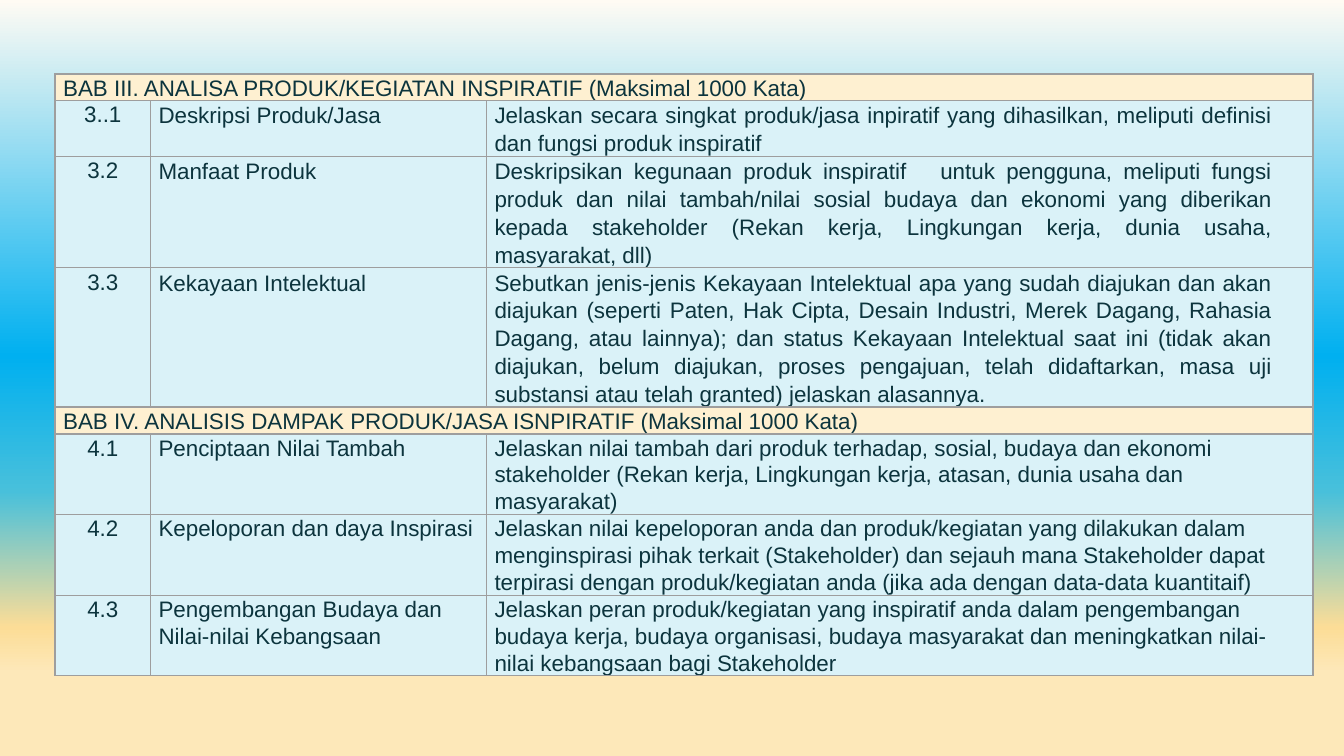
"""Build a slide with a table that outlines chapters III and IV of a report."""
import pptx
import pptx.util
import pptx.dml.color
import pptx.enum.text
import pptx.oxml
import pptx.oxml.ns
import lxml.etree

inch = pptx.util.Inches
align = pptx.enum.text.PP_ALIGN
qn = pptx.oxml.ns.qn


def tint(color):
    return pptx.dml.color.RGBColor.from_string(color)


def paint(parent, color):
    fill = lxml.etree.SubElement(parent, qn("a:solidFill"))
    lxml.etree.SubElement(fill, qn("a:srgbClr"), val=color)


stops = [(0, "FFFBF3"), (47, "00B0F0"), (65, "48C0DB"), (83, "FCDD97"), (89, "FDE8B9")]
heads = {
    "3": "BAB III. ANALISA PRODUK/KEGIATAN INSPIRATIF (Maksimal 1000 Kata)",
    "4": "BAB IV. ANALISIS DAMPAK PRODUK/JASA ISNPIRATIF (Maksimal 1000 Kata)",
}
items = [
    ("3..1", "Deskripsi Produk/Jasa",
     "Jelaskan secara singkat produk/jasa inpiratif yang dihasilkan, meliputi definisi "
     "dan fungsi produk inspiratif", 2),
    ("3.2", "Manfaat Produk ",
     "Deskripsikan kegunaan produk inspiratif   untuk pengguna, meliputi fungsi produk "
     "dan nilai tambah/nilai sosial budaya dan ekonomi yang diberikan kepada stakeholder "
     "(Rekan kerja, Lingkungan kerja, dunia usaha, masyarakat, dll)", 4),
    ("3.3", "Kekayaan Intelektual ",
     "Sebutkan jenis-jenis Kekayaan Intelektual apa yang sudah diajukan dan akan diajukan "
     "(seperti Paten, Hak Cipta, Desain Industri, Merek Dagang, Rahasia Dagang, atau "
     "lainnya); dan status Kekayaan Intelektual saat ini (tidak akan diajukan, belum "
     "diajukan, proses pengajuan, telah didaftarkan, masa uji substansi atau telah "
     "granted) jelaskan alasannya.", 5),
    ("4.1", "Penciptaan Nilai Tambah",
     "Jelaskan nilai tambah dari produk terhadap, sosial, budaya dan ekonomi stakeholder "
     "(Rekan kerja, Lingkungan kerja, atasan, dunia usaha dan masyarakat)", 3),
    ("4.2", "Kepeloporan dan daya Inspirasi",
     "Jelaskan nilai kepeloporan anda dan produk/kegiatan yang dilakukan dalam "
     "menginspirasi pihak terkait (Stakeholder) dan sejauh mana Stakeholder dapat "
     "terpirasi dengan produk/kegiatan anda (jika ada dengan data-data kuantitaif)", 3),
    ("4.3", "Pengembangan Budaya dan Nilai-nilai Kebangsaan",
     "Jelaskan peran produk/kegiatan yang inspiratif anda dalam pengembangan budaya kerja, "
     "budaya organisasi, budaya masyarakat dan meningkatkan nilai-nilai kebangsaan bagi "
     "Stakeholder", 3),
]

rows = []
for item in items:
    part = item[0][0]
    if part in heads:
        rows.append((heads.pop(part), "", "", 1))
    rows.append(item)

deck = pptx.Presentation()
deck.slide_width, deck.slide_height = inch(10), inch(10 * 9 / 16)
slide = deck.slides.add_slide(deck.slide_layouts[6])

slide.background.fill.gradient()
grad = next(slide.element.iter(qn("a:gradFill")))
ramp = grad.find(qn("a:gsLst"))
for old in list(ramp):
    ramp.remove(old)
for share, color in stops:
    stop = lxml.etree.SubElement(ramp, qn("a:gs"), pos=str(share * 1000))
    lxml.etree.SubElement(stop, qn("a:srgbClr"), val=color)
grad.find(qn("a:lin")).set("ang", "5400000")

line = 0.2
widths = [0.71, 2.5, 6.15]
high = line * sum(row[3] for row in rows)
frame = slide.shapes.add_table(
    len(rows), len(widths), inch(0.41), inch(0.55), inch(sum(widths)), inch(high))
table = frame.table
table.first_row = table.horz_banding = False
for column, width in zip(table.columns, widths):
    column.width = inch(width)

for i, (code, name, text, lines) in enumerate(rows):
    table.rows[i].height = inch(line * lines)
    head = not name
    if head:
        table.cell(i, 0).merge(table.cell(i, 2))
    for j, words in enumerate((code, name, text)):
        cell = table.cell(i, j)
        cell.fill.solid()
        cell.fill.fore_color.rgb = tint("FEF0D1" if head else "DAF2F8")
        cell.margin_left = inch(0.06)
        cell.margin_right = inch(0.3 if j == 2 else 0.06)
        cell.margin_top = cell.margin_bottom = 0
        props = cell._tc.get_or_add_tcPr()
        for k, side in enumerate(("lnL", "lnR", "lnT", "lnB")):
            edge = lxml.etree.Element(qn("a:" + side), w=str(pptx.util.Pt(0.75)))
            paint(edge, "9E9E9E")
            props.insert(k, edge)
        if not words:
            continue
        cell.text_frame.text = words
        para = cell.text_frame.paragraphs[0]
        wide = j > 0 and code.startswith("3")
        para.line_spacing = 1.11 if wide else 1.07
        para.space_after = pptx.util.Pt(2 if wide else 1.4)
        para.alignment = align.JUSTIFY if wide else align.LEFT
        if j == 0 and not head:
            para.alignment = align.CENTER
        font = para.runs[0].font
        font.name, font.size = "Arial", pptx.util.Pt(12)
        font.color.rgb = tint("0C343D")

deck.save("out.pptx")
